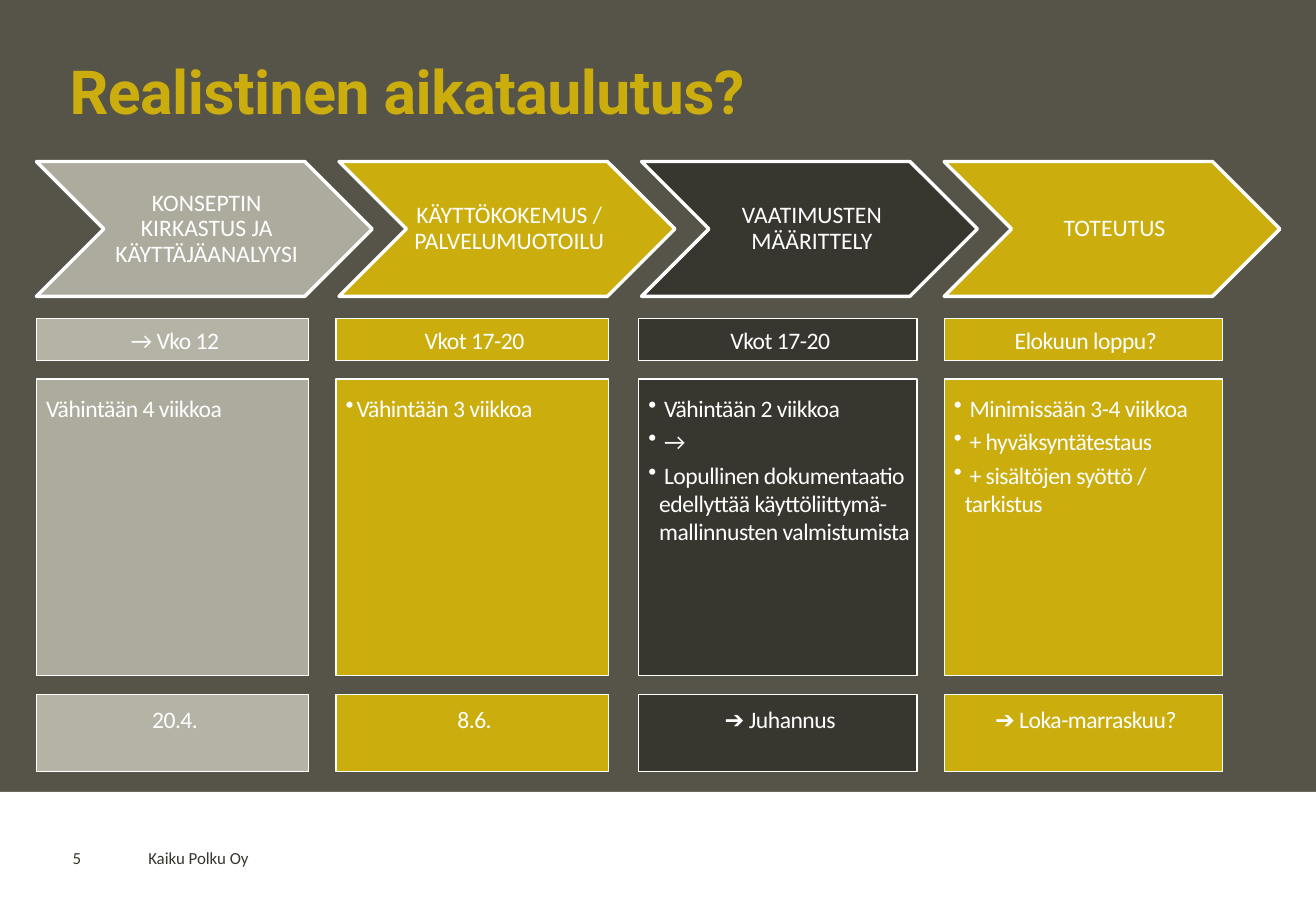
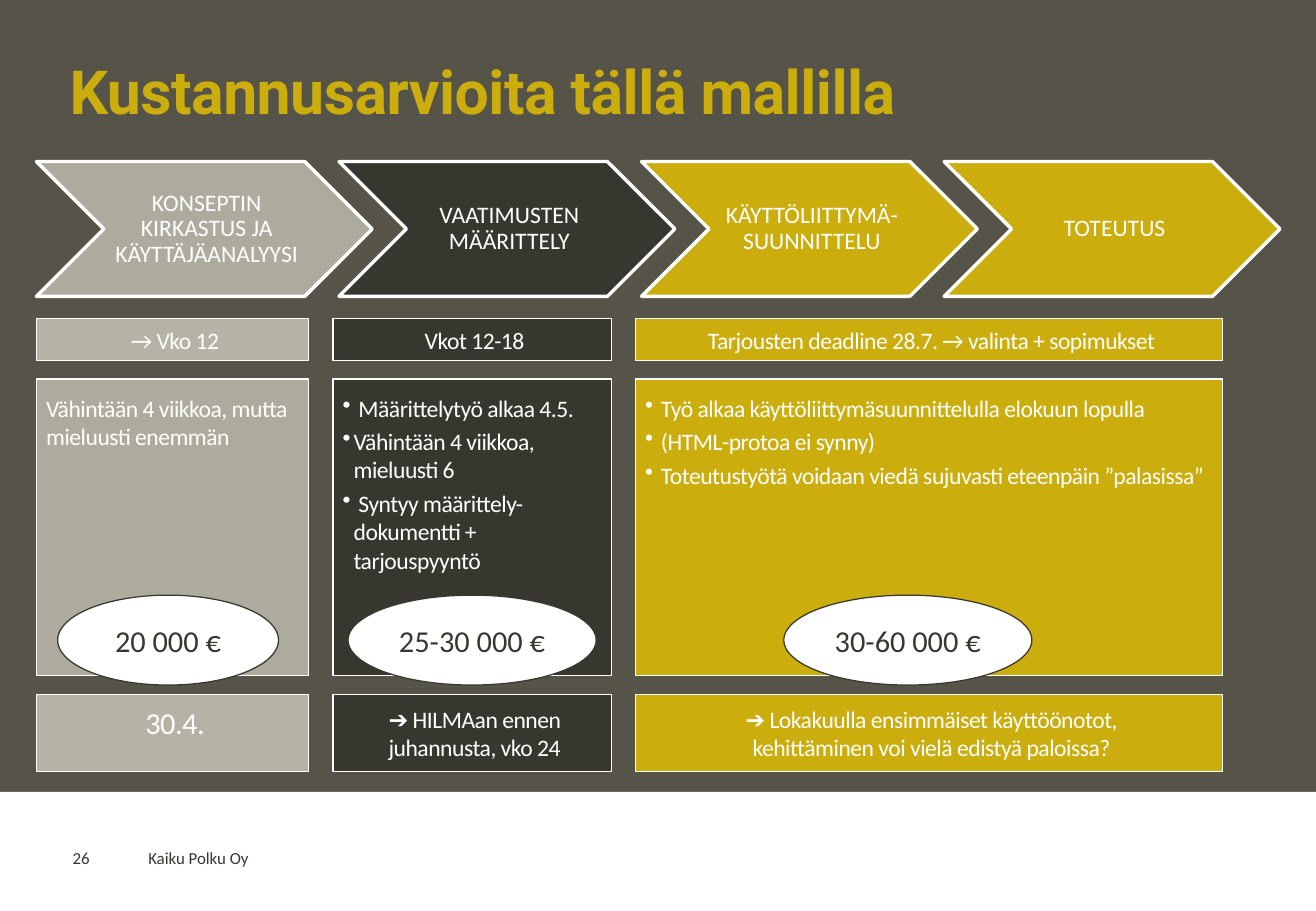
import copy
import dataclasses

import pptx
import pptx.dml.color
import pptx.enum.shapes
import pptx.enum.text
import pptx.oxml.ns
import pptx.oxml.xmlchemy
import pptx.util
from lxml import etree

WIDTH, HEIGHT = 10.83, 7.5
MARGIN, COLUMN, ROW = 0.3, 2.49, 0.5
OLIVE, GOLD, DARK, WHITE = "565448", "CBAD0D", "38372F", "FFFFFF"
STONE, PALE_STONE = "ADAB9D", "B5B3A6"
SHAPES = pptx.enum.shapes.MSO_SHAPE
ANCHOR = pptx.enum.text.MSO_ANCHOR
ALIGN = pptx.enum.text.PP_ALIGN
qn = pptx.oxml.ns.qn


@dataclasses.dataclass
class Phase:
    column: float
    span: float
    color: str
    date: str
    details: list
    result: str
    result_size: int = 14


def rgb(value):
    return pptx.dml.color.RGBColor.from_string(value)


def add_bullet(paragraph, color):
    properties = paragraph._p.get_or_add_pPr()
    indent = pptx.util.Inches(0.09)
    properties.set("marL", str(indent))
    properties.set("indent", str(-indent))
    bullet_color = etree.SubElement(properties, qn("a:buClr"))
    etree.SubElement(bullet_color, qn("a:srgbClr"), val=color)
    etree.SubElement(properties, qn("a:buChar"), char="•")


def write(shape, *texts, size=14, color=WHITE, font="Calibri", bold=False,
          align=ALIGN.LEFT, anchor=ANCHOR.TOP, insets=(0.1, 0.05, 0.1, 0.05),
          line_spacing=None, space_after=0, tracking=0, bullet=False):
    frame = shape.text_frame
    frame.word_wrap = True
    frame.vertical_anchor = anchor
    (frame.margin_left, frame.margin_top, frame.margin_right,
     frame.margin_bottom) = map(pptx.util.Inches, insets)
    for index, text in enumerate(texts):
        paragraph = frame.add_paragraph() if index else frame.paragraphs[0]
        paragraph.text = text
        if bullet:
            add_bullet(paragraph, color)
        paragraph.alignment = align
        paragraph.line_spacing = line_spacing
        paragraph.space_after = pptx.util.Pt(space_after)
        for run in paragraph.runs:
            run.font.name = font
            run.font.size = pptx.util.Pt(size)
            run.font.bold = bold
            run.font.color.rgb = rgb(color)
            run._r.get_or_add_rPr().set("spc", str(round(tracking * 100)))
        for line_break in paragraph._p.findall(qn("a:br")):
            line_break.append(copy.deepcopy(paragraph.runs[0]._r.rPr))


class Deck:
    def __init__(self):
        self.presentation = pptx.Presentation()
        self.presentation.slide_width = pptx.util.Inches(WIDTH)
        self.presentation.slide_height = pptx.util.Inches(HEIGHT)
        self.slide = None

    def place(self, column, row, columns, rows):
        lengths = (MARGIN + column * COLUMN, row * ROW, columns * COLUMN, rows * ROW)
        return [pptx.util.Inches(length) for length in lengths]

    def text(self, area, text, **style):
        write(self.slide.shapes.add_textbox(*self.place(*area)), text, **style)

    def shape(self, kind, area, fill, line=None, line_width=0.75):
        shape = self.slide.shapes.add_shape(kind, *self.place(*area))
        shape.shadow.inherit = False
        shape.fill.solid()
        shape.fill.fore_color.rgb = rgb(fill)
        if line:
            shape.line.color.rgb = rgb(line)
            shape.line.width = pptx.util.Pt(line_width)
        else:
            shape.line.fill.background()
        return shape

    def new_slide(self, title, number):
        self.slide = self.presentation.slides.add_slide(self.presentation.slide_layouts[6])
        self.slide.background.fill.solid()
        self.slide.background.fill.fore_color.rgb = rgb(OLIVE)
        self.shape(SHAPES.RECTANGLE, (-MARGIN / COLUMN, 13.04, WIDTH / COLUMN, 1.96), WHITE)
        self.text((0.07, 0.46, 3.88, 1.74), title, size=36, color=GOLD, font="Roboto",
                  bold=True, anchor=ANCHOR.BOTTOM, line_spacing=0.9, tracking=-0.3)
        for column, columns, text in ((0.33, 2.3, "Kaiku Polku Oy"), (0.08, 0.2, number)):
            self.text((column, 13.96, columns, 0.32), text, size=10, color=DARK,
                      anchor=ANCHOR.MIDDLE)

    def chevrons(self, stages):
        for column, (text, color) in enumerate(stages):
            self.shape(SHAPES.CHEVRON, (column, 2.66, 1.11, 2.22), color, WHITE, 2)
            self.text((column + 0.22, 2.66, 0.67, 2.22), text, align=ALIGN.CENTER,
                      anchor=ANCHOR.MIDDLE, insets=(0.06, 0.02, 0.02, 0.02),
                      line_spacing=0.9)

    def panel(self, area, fill, *texts, top=0.08, **style):
        panel = self.shape(SHAPES.RECTANGLE, area, fill, WHITE)
        write(panel, *texts, insets=(0.08, top, 0.04, 0.31), space_after=3,
              tracking=-0.3, **style)

    def phase(self, phase):
        is_stone = phase.color == STONE
        edge_color = PALE_STONE if is_stone else phase.color
        self.panel((phase.column, 6.24, phase.span, 4.88), phase.color, *phase.details,
                   top=0.12, bullet=not is_stone)
        self.panel((phase.column, 11.44, phase.span, 1.26), edge_color, phase.result,
                   size=phase.result_size, align=ALIGN.CENTER)
        self.panel((phase.column, 5.24, phase.span, 0.7), edge_color, phase.date,
                   align=ALIGN.CENTER)

    def cost(self, column, columns, text):
        oval = self.shape(SHAPES.OVAL, (column, 9.8, columns, 1.48), WHITE, DARK)
        write(oval, text, size=18, color=DARK, align=ALIGN.CENTER, anchor=ANCHOR.MIDDLE)


CONCEPT = ("KONSEPTIN KIRKASTUS JA KÄYTTÄJÄANALYYSI", STONE)
REQUIREMENTS = ("VAATIMUSTEN MÄÄRITTELY", DARK)
DELIVERY = ("TOTEUTUS", GOLD)

SCHEDULE = [
    Phase(0, 0.9, STONE, "→ Vko 12", ["Vähintään 4 viikkoa"], "20.4."),
    Phase(0.99, 0.9, GOLD, "Vkot 17-20", ["Vähintään 3 viikkoa"], "8.6."),
    Phase(1.99, 0.92, DARK, "Vkot 17-20",
          [" Vähintään 2 viikkoa", " →",
           " Lopullinen dokumentaatio edellyttää käyttöliittymä-mallinnusten valmistumista"],
          "➔ Juhannus"),
    Phase(3, 0.92, GOLD, "Elokuun loppu?",
          [" Minimissään 3-4 viikkoa", " + hyväksyntätestaus",
           " + sisältöjen syöttö / tarkistus"],
          "➔ Loka-marraskuu?"),
]

ESTIMATES = [
    Phase(0, 0.9, STONE, "→ Vko 12", ["Vähintään 4 viikkoa, mutta mieluusti enemmän"],
          "30.4.", 18),
    Phase(0.98, 0.92, DARK, "Vkot 12-18",
          [" Määrittelytyö alkaa 4.5.", "Vähintään 4 viikkoa, mieluusti 6",
           " Syntyy määrittely-dokumentti + tarjouspyyntö"],
          "➔ HILMAan ennen juhannusta, vko 24"),
    Phase(1.98, 1.94, GOLD, "Tarjousten deadline 28.7. → valinta + sopimukset",
          [" Työ alkaa käyttöliittymäsuunnittelulla elokuun lopulla",
           " (HTML-protoa ei synny)",
           " Toteutustyötä voidaan viedä sujuvasti eteenpäin ”palasissa”"],
          "➔ Lokakuulla ensimmäiset käyttöönotot,\vkehittäminen voi vielä edistyä paloissa?"),
]


def main():
    deck = Deck()
    deck.new_slide("Realistinen aikataulutus?", "5")
    deck.chevrons([CONCEPT, ("KÄYTTÖKOKEMUS / PALVELUMUOTOILU", GOLD), REQUIREMENTS, DELIVERY])
    for phase in SCHEDULE:
        deck.phase(phase)

    deck.new_slide("Kustannusarvioita tällä mallilla", "26")
    deck.chevrons([CONCEPT, REQUIREMENTS, ("KÄYTTÖLIITTYMÄ-SUUNNITTELU", GOLD), DELIVERY])
    for phase in ESTIMATES:
        deck.phase(phase)
    deck.cost(0.07, 0.73, "20 000 €")
    deck.cost(1.03, 0.82, "25-30 000 €")
    deck.cost(2.47, 0.82, "30-60 000 €")
    deck.presentation.save("out.pptx")


if __name__ == "__main__":
    main()
